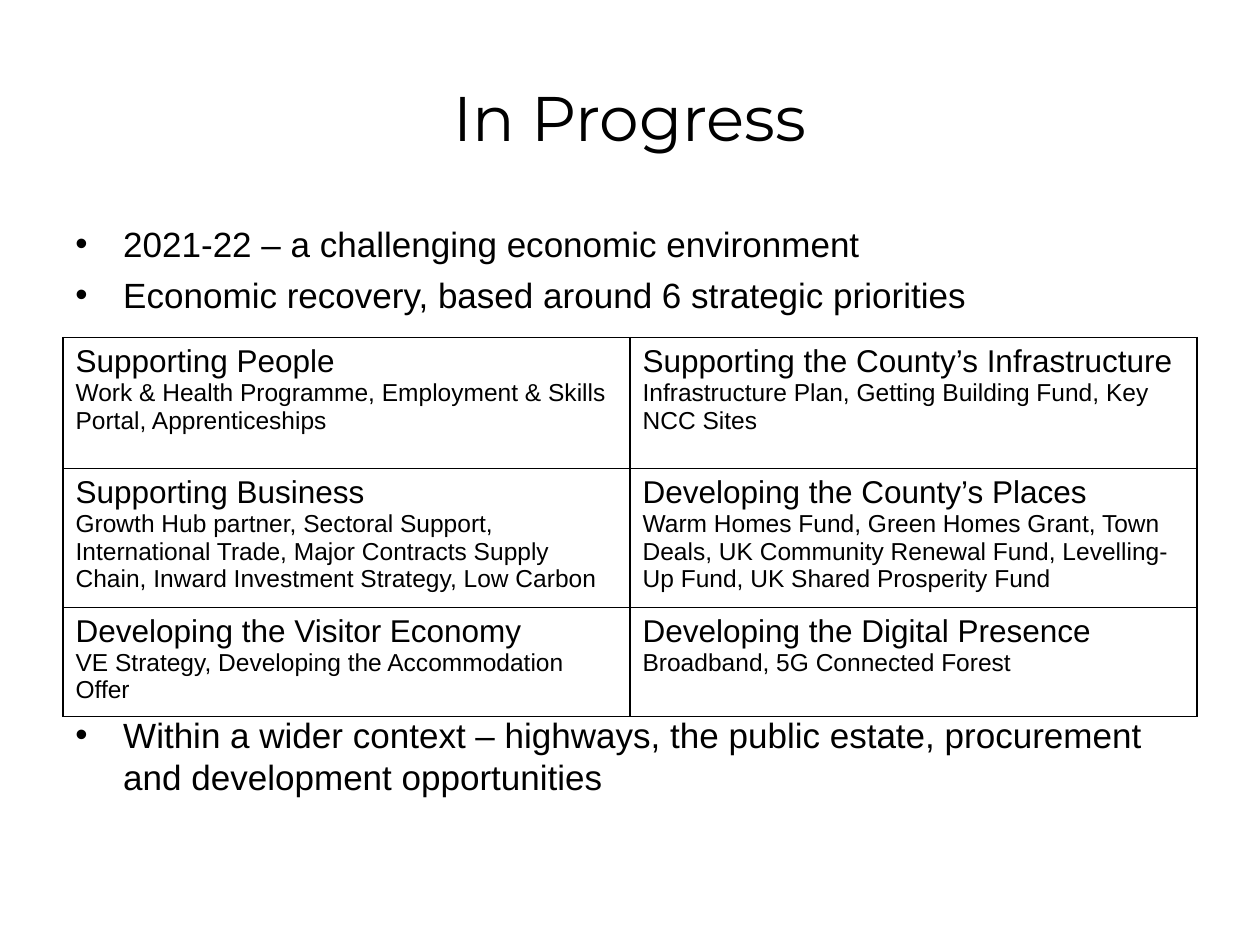
from lxml import etree
from pptx import Presentation, util as u
from pptx.dml.color import RGBColor
from pptx.enum import text
from pptx.oxml.ns import qn

BLACK, WHITE = "000000", "FFFFFF"
OPENING = ["2021-22 – a challenging economic environment",
           "Economic recovery, based around 6 strategic priorities"]
CLOSING = ["Within a wider context – highways, the public estate, "
           "procurement and development opportunities"]
PRIORITIES = [
    [("Supporting People",
      "Work & Health Programme, Employment & Skills Portal, Apprenticeships"),
     ("Supporting the County’s Infrastructure",
      "Infrastructure Plan, Getting Building Fund, Key NCC Sites")],
    [("Supporting Business",
      "Growth Hub partner, Sectoral Support, International Trade, Major Contracts "
      "Supply Chain, Inward Investment Strategy, Low Carbon"),
     ("Developing the County’s Places",
      "Warm Homes Fund, Green Homes Grant, Town Deals, UK Community Renewal Fund, "
      "Levelling-Up Fund, UK Shared Prosperity Fund")],
    [("Developing the Visitor Economy",
      "VE Strategy, Developing the Accommodation Offer"),
     ("Developing the Digital Presence",
      "Broadband, 5G Connected Forest")],
]


def color(value):
    return RGBColor.from_string(value)


def set_values(target, values):
    for name, value in values.items():
        setattr(target, name, value)


class SlideBuilder:
    heading_font, body_font = "Montserrat", "Arial"
    left, width = 0.5, 9

    def __init__(self, deck):
        self.slide = deck.slides.add_slide(deck.slide_layouts[5])

    def add_span(self, para, words, size, font=body_font):
        span = para.add_run()
        span.text = words
        set_values(span.font, {"name": font, "size": u.Pt(size), "bold": False})
        span.font.color.rgb = color(BLACK)

    def title(self, words, top, height):
        box = self.slide.shapes.title
        set_values(box, {"left": u.Inches(self.left), "top": u.Inches(top),
                         "width": u.Inches(self.width), "height": u.Inches(height)})
        box.text_frame.vertical_anchor = text.MSO_ANCHOR.MIDDLE
        para = box.text_frame.paragraphs[0]
        para.alignment = text.PP_ALIGN.CENTER
        self.add_span(para, words, 36, self.heading_font)

    def bullets(self, lines, top, height):
        box = self.slide.shapes.add_textbox(u.Inches(self.left), u.Inches(top),
                                            u.Inches(self.width), u.Inches(height))
        frame = box.text_frame
        frame.word_wrap = True
        for index, line in enumerate(lines):
            para = frame.add_paragraph() if index else frame.paragraphs[0]
            indent = u.Inches(0.38)
            props = para._p.get_or_add_pPr()
            props.set("marL", str(indent))
            props.set("indent", str(-indent))
            etree.SubElement(props, qn("a:buFont"), typeface=self.body_font)
            etree.SubElement(props, qn("a:buChar"), char="•")
            para.space_before = u.Pt(5 if index else 0)
            self.add_span(para, line, 20)

    def table(self, rows, top, heights):
        frame = self.slide.shapes.add_table(
            len(rows), len(rows[0]), u.Inches(self.left), u.Inches(top),
            u.Inches(self.width), u.Inches(sum(heights)))
        grid = frame.table
        set_values(grid, {"first_row": False, "horz_banding": False})
        for row, height, entries in zip(grid.rows, heights, rows):
            row.height = u.Inches(height)
            for cell, (heading, detail) in zip(row.cells, entries):
                self.add_span(cell.text_frame.paragraphs[0], heading, 18)
                self.add_span(cell.text_frame.add_paragraph(), detail, 14)
                self.borders(cell)
                cell.fill.solid()
                cell.fill.fore_color.rgb = color(WHITE)

    def borders(self, cell):
        props = cell._tc.get_or_add_tcPr()
        for side in ("lnL", "lnR", "lnT", "lnB"):
            line = etree.SubElement(props, qn(f"a:{side}"), w=str(u.Pt(1)))
            fill = etree.SubElement(line, qn("a:solidFill"))
            etree.SubElement(fill, qn("a:srgbClr"), val=BLACK)


def main():
    deck = Presentation()
    set_values(deck, {"slide_width": u.Inches(10), "slide_height": u.Inches(7.5)})
    page = SlideBuilder(deck)
    page.title("In Progress", 0.3, 1.25)
    page.bullets(OPENING, 1.72, 0.85)
    page.table(PRIORITIES, 2.68, [1.04, 1.04, 0.82])
    page.bullets(CLOSING, 5.61, 0.75)
    deck.save("out.pptx")


if __name__ == "__main__":
    main()
